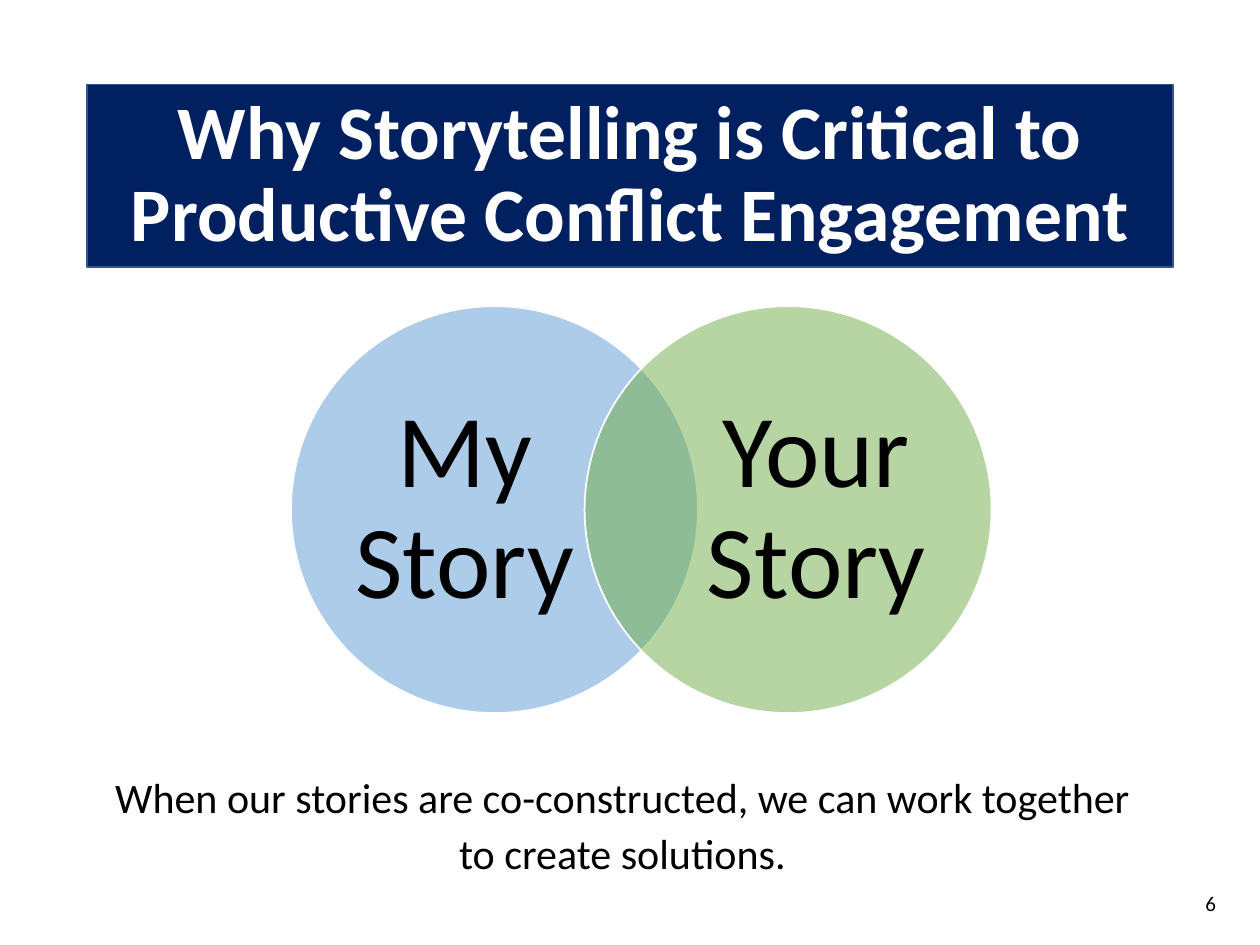
from dataclasses import dataclass

from lxml.etree import SubElement
from pptx import Presentation
from pptx.dml.color import RGBColor
from pptx.enum.shapes import MSO_SHAPE
from pptx.enum.text import MSO_ANCHOR, MSO_AUTO_SIZE, PP_ALIGN
from pptx.oxml.ns import qn
from pptx.util import Inches, Pt


@dataclass(frozen=True)
class Theme:
    font: str = "Calibri"
    navy: str = "002060"
    navy_edge: str = "325491"
    blue: str = "5B9BD5"
    green: str = "70AD47"
    white: str = "FFFFFF"
    black: str = "000000"
    title_size: float = 43.2
    story_size: float = 59
    caption_size: float = 24
    number_size: float = 12


theme = Theme()


def write(box, text, size, color, align=PP_ALIGN.CENTER, line_spacing=1.0, bold=False):
    frame = box.text_frame
    frame.word_wrap = True
    frame.auto_size = MSO_AUTO_SIZE.NONE
    frame.vertical_anchor = MSO_ANCHOR.MIDDLE
    paragraph = frame.paragraphs[0]
    paragraph.alignment = align
    paragraph.line_spacing = line_spacing
    run = paragraph.add_run()
    run.text = text
    run.font.name = theme.font
    run.font.size = Pt(size)
    run.font.bold = bold
    run.font.color.rgb = RGBColor.from_string(color)
    return frame


def paint(shape, fill, line):
    shape.fill.solid()
    shape.fill.fore_color.rgb = RGBColor.from_string(fill)
    shape.line.color.rgb = RGBColor.from_string(line)
    shape.line.width = Pt(1)


prs = Presentation()
prs.slide_width = Inches(10)
prs.slide_height = Inches(7.5)
slide = prs.slides.add_slide(prs.slide_layouts[5])

title = slide.shapes.title
title.left, title.top = Inches(0.69), Inches(0.67)
title.width, title.height = Inches(8.62), Inches(1.45)
paint(title, theme.navy, theme.navy_edge)
write(title, "Why Storytelling is Critical to Productive Conflict Engagement",
      theme.title_size, theme.white, line_spacing=0.9, bold=True)

page_number = slide.shapes.add_textbox(Inches(7.5), Inches(6.97), Inches(2.25), Inches(0.4))
write(page_number, "6", theme.number_size, theme.black, PP_ALIGN.RIGHT)

venn = slide.shapes.add_group_shape()
diameter = Inches(3.23)
stories = [
    ("My Story", theme.blue, 2.31, 2.76),
    ("Your Story", theme.green, 4.64, 5.55),
]
for story, color, circle_left, label_left in stories:
    circle = venn.shapes.add_shape(
        MSO_SHAPE.OVAL, Inches(circle_left), Inches(2.43), diameter, diameter)
    circle.shadow.inherit = False
    paint(circle, color, theme.white)
    rgb = circle.fill._xPr.find(qn("a:solidFill")).find(qn("a:srgbClr"))
    SubElement(rgb, qn("a:alpha"), val="50000")

    label = venn.shapes.add_textbox(
        Inches(label_left), Inches(2.81), Inches(1.86), Inches(2.47))
    label_frame = write(label, story, theme.story_size, theme.black, line_spacing=0.9)
    label_frame.margin_left = label_frame.margin_right = 0
    label_frame.margin_top = label_frame.margin_bottom = 0

caption = slide.shapes.add_textbox(Inches(0.69), Inches(5.79), Inches(8.5), Inches(1.25))
caption_frame = write(
    caption,
    "When our stories are co-constructed, we can work together to create solutions.",
    theme.caption_size, theme.black, line_spacing=1.11)
caption_frame.vertical_anchor = MSO_ANCHOR.TOP
caption_frame.margin_top = Inches(0.29)
caption_frame.margin_left = caption_frame.margin_right = Inches(0.15)

prs.save("out.pptx")
